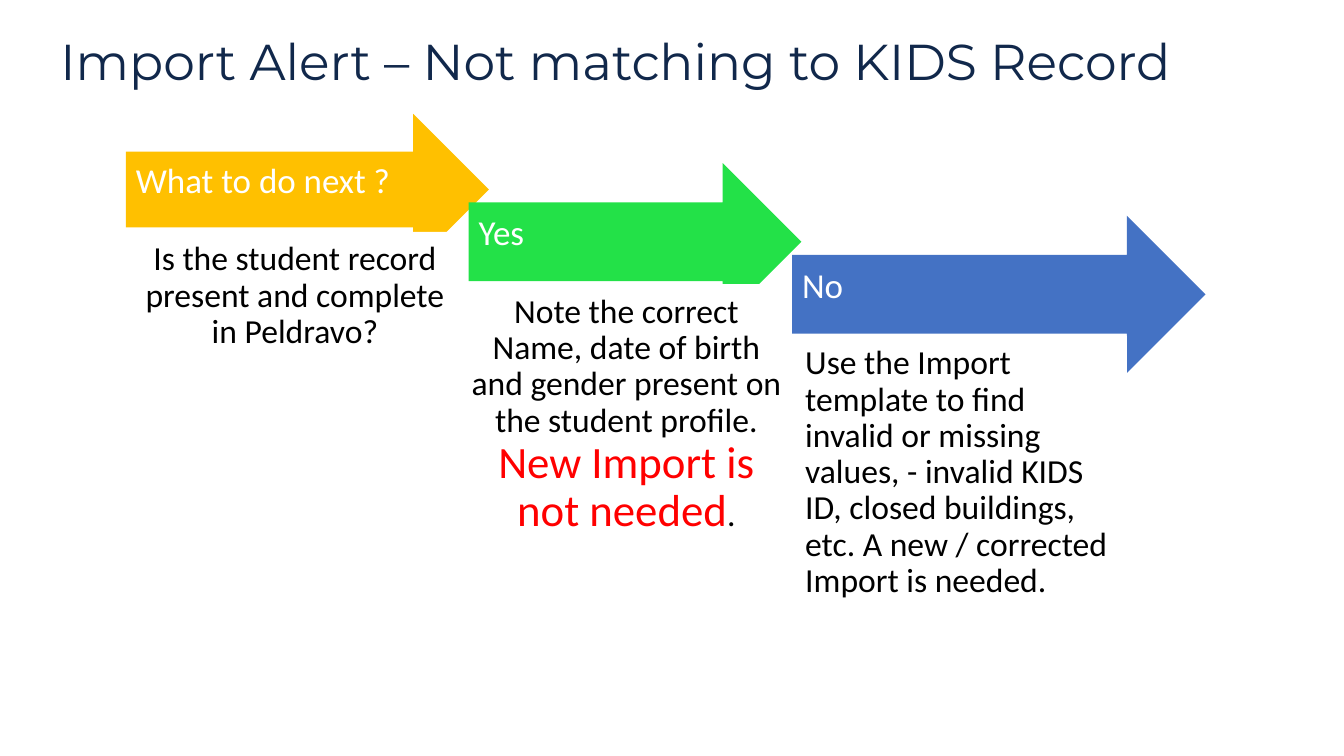
from dataclasses import dataclass

from pptx import Presentation
from pptx.dml.color import RGBColor
from pptx.enum.shapes import MSO_SHAPE as Shape
from pptx.enum.text import MSO_ANCHOR as Anchor, MSO_AUTO_SIZE as AutoSize, PP_ALIGN as Align
from pptx.util import Pt

WHITE = RGBColor(0xFF, 0xFF, 0xFF)
BLACK = RGBColor(0x00, 0x00, 0x00)
NAVY = RGBColor(0x11, 0x28, 0x4B)
AMBER = RGBColor(0xFF, 0xC0, 0x00)
GREEN = RGBColor(0x23, 0xE1, 0x48)
BLUE = RGBColor(0x44, 0x72, 0xC4)
RED = RGBColor(0xFF, 0x00, 0x00)

BODY_FONT = "Calibri"
TITLE_FONT = "Montserrat"
LINE_SPACING = 0.9


@dataclass
class Step:
    heading: str
    color: RGBColor
    arrow_box: tuple  # left, top, width, height in points
    detail_box: tuple
    detail_runs: list  # (text, size, color)
    align: Align


STEPS = [
    Step("What to do next ?", AMBER, (90, 81.4, 259.2, 108), (92.2, 165.6, 236.9, 216),
         [("Is the student record present and complete in Peldravo?", 24, BLACK)],
         Align.CENTER),
    Step("Yes", GREEN, (334.8, 116.6, 237.6, 112.3), (329, 203, 236.9, 216),
         [("Note the correct Name, date of birth and gender present on "
           "the student profile. ", 24, BLACK),
          ("New Import is not needed", 32, RED),
          (".", 24, BLACK)],
         Align.CENTER),
    Step("No", BLUE, (565.9, 154.1, 295.2, 112.3), (568.1, 239.8, 236.9, 212.4),
         [("Use the Import template to find invalid or missing values, - invalid "
           "KIDS ID, closed buildings, etc. A new / corrected Import is needed.",
           24, BLACK)],
         Align.LEFT),
]


def style_run(run, font_name, size, color):
    run.font.name = font_name
    run.font.size = Pt(size)
    run.font.color.rgb = color


def add_title(slide, text, box):
    title = slide.shapes.title
    title.left, title.top, title.width, title.height = map(Pt, box)
    frame = title.text_frame
    frame.text = text
    frame.auto_size = AutoSize.NONE
    frame.vertical_anchor = Anchor.MIDDLE
    paragraph = frame.paragraphs[0]
    paragraph.alignment = Align.LEFT
    paragraph.line_spacing = LINE_SPACING
    style_run(paragraph.runs[0], TITLE_FONT, 36, NAVY)


def add_panel(slide, kind, box, fill, runs, align, anchor, right_inset=7.2, bottom_inset=7.2):
    """Add a borderless filled shape holding one paragraph of (text, size, color) runs."""
    shape = slide.shapes.add_shape(kind, *map(Pt, box))
    shape.shadow.inherit = False
    shape.fill.solid()
    shape.fill.fore_color.rgb = fill
    shape.line.fill.background()
    frame = shape.text_frame
    frame.word_wrap = True
    frame.vertical_anchor = anchor
    frame.margin_left = frame.margin_top = Pt(7.2)
    frame.margin_right, frame.margin_bottom = Pt(right_inset), Pt(bottom_inset)
    paragraph = frame.paragraphs[0]
    paragraph.alignment = align
    paragraph.line_spacing = LINE_SPACING
    for text, size, color in runs:
        run = paragraph.add_run()
        run.text = text
        style_run(run, BODY_FONT, size, color)


def add_step(slide, step):
    add_panel(slide, Shape.RIGHT_ARROW, step.arrow_box, step.color,
              [(step.heading, 25, WHITE)], Align.LEFT, Anchor.MIDDLE,
              right_inset=20, bottom_inset=18)
    add_panel(slide, Shape.RECTANGLE, step.detail_box, WHITE,
              step.detail_runs, step.align, Anchor.TOP)


def main():
    presentation = Presentation()
    presentation.slide_width, presentation.slide_height = Pt(960), Pt(540)
    slide = presentation.slides.add_slide(presentation.slide_layouts[5])
    add_title(slide, "Import Alert – Not matching to KIDS Record", (36, 12.2, 887, 67.7))
    for step in STEPS:
        add_step(slide, step)
    presentation.save("out.pptx")


if __name__ == "__main__":
    main()
